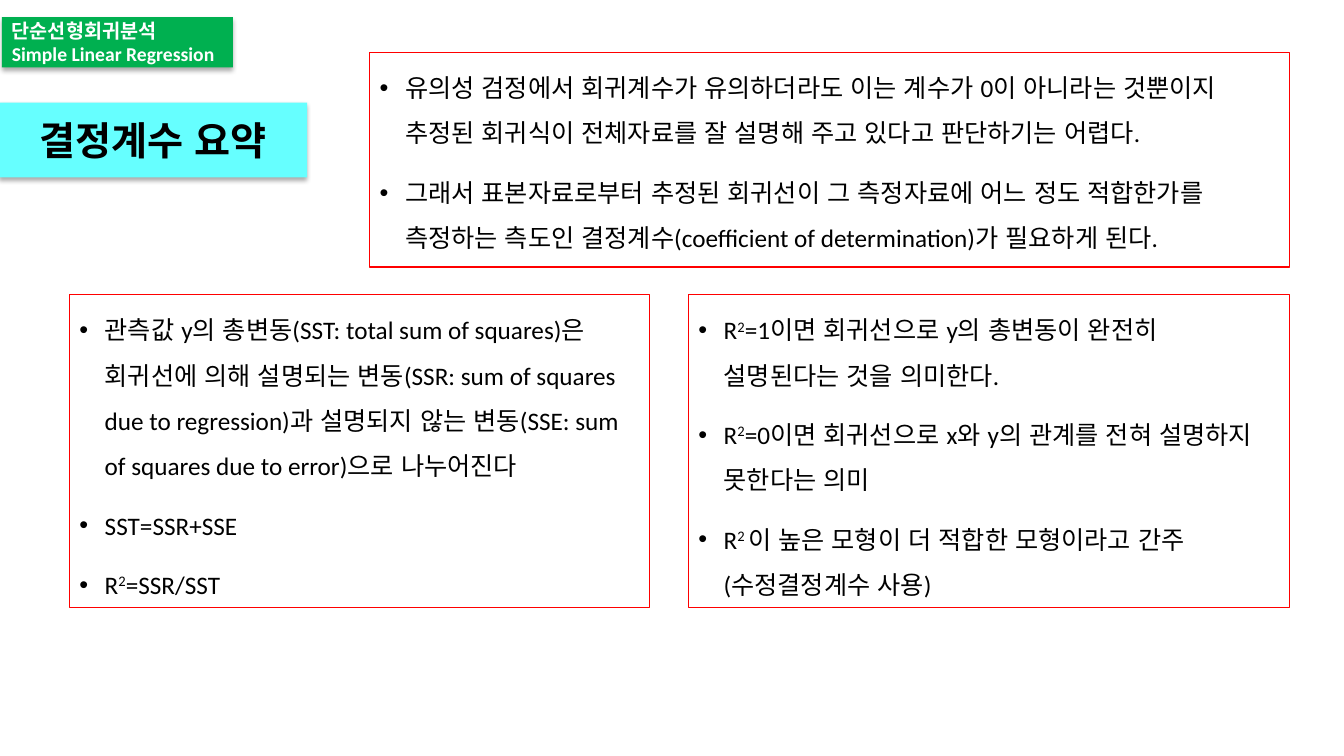
from dataclasses import dataclass

from lxml import etree
from pptx import Presentation
from pptx import util as u
from pptx.dml.color import RGBColor
from pptx.enum import lang, shapes, text
from pptx.oxml import ns


@dataclass(frozen=True)
class Theme:
    font: str = "Calibri"
    ink: str = "000000"
    white: str = "FFFFFF"
    border: str = "FF0000"
    green: str = "00B050"
    cyan: str = "66FFFF"
    body_size: int = 18
    topic_size: int = 14
    title_size: int = 28


@dataclass(frozen=True)
class Box:
    left: float
    top: float
    width: float
    height: float


@dataclass(frozen=True)
class Panel:
    box: Box
    points: tuple[str, ...]  # text between ^ marks is superscript


@dataclass(frozen=True)
class Label:
    box: Box
    lines: tuple[str, ...]
    fill: str
    ink: str
    size: int
    align: text.PP_ALIGN


THEME = Theme()
ROW_TOP, ROW_HEIGHT = 7.42, 7.9

PANELS = (
    Panel(Box(9.32, 1.32, 23.19, 5.41), (
        "유의성 검정에서 회귀계수가 유의하더라도 이는 계수가 0이 아니라는 것뿐이지 "
        "추정된 회귀식이 전체자료를 잘 설명해 주고 있다고 판단하기는 어렵다.",
        "그래서 표본자료로부터 추정된 회귀선이 그 측정자료에 어느 정도 적합한가를 "
        "측정하는 측도인 결정계수(coefficient of determination)가 필요하게 된다.",
    )),
    Panel(Box(1.75, ROW_TOP, 14.63, ROW_HEIGHT), (
        "관측값 y의 총변동(SST: total sum of squares)은 회귀선에 의해 설명되는 "
        "변동(SSR: sum of squares due to regression)과 설명되지 않는 "
        "변동(SSE: sum of squares due to error)으로 나누어진다",
        "SST=SSR+SSE",
        "R^2^=SSR/SST",
    )),
    Panel(Box(17.35, ROW_TOP, 15.16, ROW_HEIGHT), (
        "R^2^=1이면 회귀선으로 y의 총변동이 완전히 설명된다는 것을 의미한다.",
        "R^2^=0이면 회귀선으로 x와 y의 관계를 전혀 설명하지 못한다는 의미",
        "R^2 ^이 높은 모형이 더 적합한 모형이라고 간주 (수정결정계수 사용)",
    )),
)

LABELS = (
    Label(Box(0.05, 0.43, 5.82, 1.27), ("단순선형회귀분석", "Simple Linear Regression"),
          THEME.green, THEME.white, THEME.topic_size, text.PP_ALIGN.LEFT),
    Label(Box(-0.03, 2.59, 7.77, 1.88), ("결정계수 요약",),
          THEME.cyan, THEME.ink, THEME.title_size, text.PP_ALIGN.CENTER),
)


def add_rectangle(slide, box: Box):
    rectangle = slide.shapes.add_shape(
        shapes.MSO_SHAPE.RECTANGLE,
        u.Cm(box.left), u.Cm(box.top), u.Cm(box.width), u.Cm(box.height))
    rectangle.shadow.inherit = False
    return rectangle


def set_font(paragraph, size: int, ink: str, bold: bool = False) -> None:
    font = paragraph.font
    font.name, font.size, font.bold = THEME.font, u.Pt(size), bold
    font.color.rgb = RGBColor.from_string(ink)
    font.language_id = lang.MSO_LANGUAGE_ID.KOREAN


def add_bullet(paragraph) -> None:
    indent = u.Cm(0.64)
    properties = paragraph._p.get_or_add_pPr()
    properties.set("marL", str(indent))
    properties.set("indent", str(-indent))
    etree.SubElement(properties, ns.qn("a:buFont"), typeface="Arial")
    etree.SubElement(properties, ns.qn("a:buChar"), char="•")


def add_soft_shadow(shape) -> None:
    effects = shape._element.spPr.find(ns.qn("a:effectLst"))
    shadow = etree.SubElement(
        effects, ns.qn("a:outerShdw"), blurRad=str(u.Pt(3.5)), dist=str(u.Pt(2.2)),
        dir="5400000", rotWithShape="0")
    color = etree.SubElement(shadow, ns.qn("a:srgbClr"), val=THEME.ink)
    etree.SubElement(color, ns.qn("a:alpha"), val="32000")


def draw_panel(slide, panel: Panel) -> None:
    rectangle = add_rectangle(slide, panel.box)
    rectangle.fill.background()
    rectangle.line.color.rgb = RGBColor.from_string(THEME.border)
    rectangle.line.width = u.Pt(0.75)
    frame = rectangle.text_frame
    frame.word_wrap = True
    frame.vertical_anchor = text.MSO_ANCHOR.TOP
    for number, point in enumerate(panel.points):
        paragraph = frame.add_paragraph() if number else frame.paragraphs[0]
        add_bullet(paragraph)
        paragraph.alignment = text.PP_ALIGN.LEFT
        paragraph.line_spacing = 1.5
        paragraph.space_before = u.Pt(10)
        set_font(paragraph, THEME.body_size, THEME.ink)
        for position, part in enumerate(point.split("^")):
            run = paragraph.add_run()
            run.text = part
            if position % 2:
                run._r.get_or_add_rPr().set("baseline", "30000")


def draw_label(slide, label: Label) -> None:
    rectangle = add_rectangle(slide, label.box)
    rectangle.fill.solid()
    rectangle.fill.fore_color.rgb = RGBColor.from_string(label.fill)
    rectangle.line.fill.background()
    add_soft_shadow(rectangle)
    frame = rectangle.text_frame
    frame.word_wrap = False
    frame.vertical_anchor = text.MSO_ANCHOR.MIDDLE
    paragraph = frame.paragraphs[0]
    paragraph.alignment = label.align
    set_font(paragraph, label.size, label.ink, bold=True)
    for number, line in enumerate(label.lines):
        if number:
            paragraph.add_line_break()
        paragraph.add_run().text = line


def main() -> None:
    deck = Presentation()
    deck.slide_width, deck.slide_height = u.Cm(33.87), u.Cm(19.05)
    slide = deck.slides.add_slide(deck.slide_layouts[6])
    # Explanations
    for panel in PANELS:
        draw_panel(slide, panel)
    # Topic and title
    for label in LABELS:
        draw_label(slide, label)
    deck.save("out.pptx")


if __name__ == "__main__":
    main()
